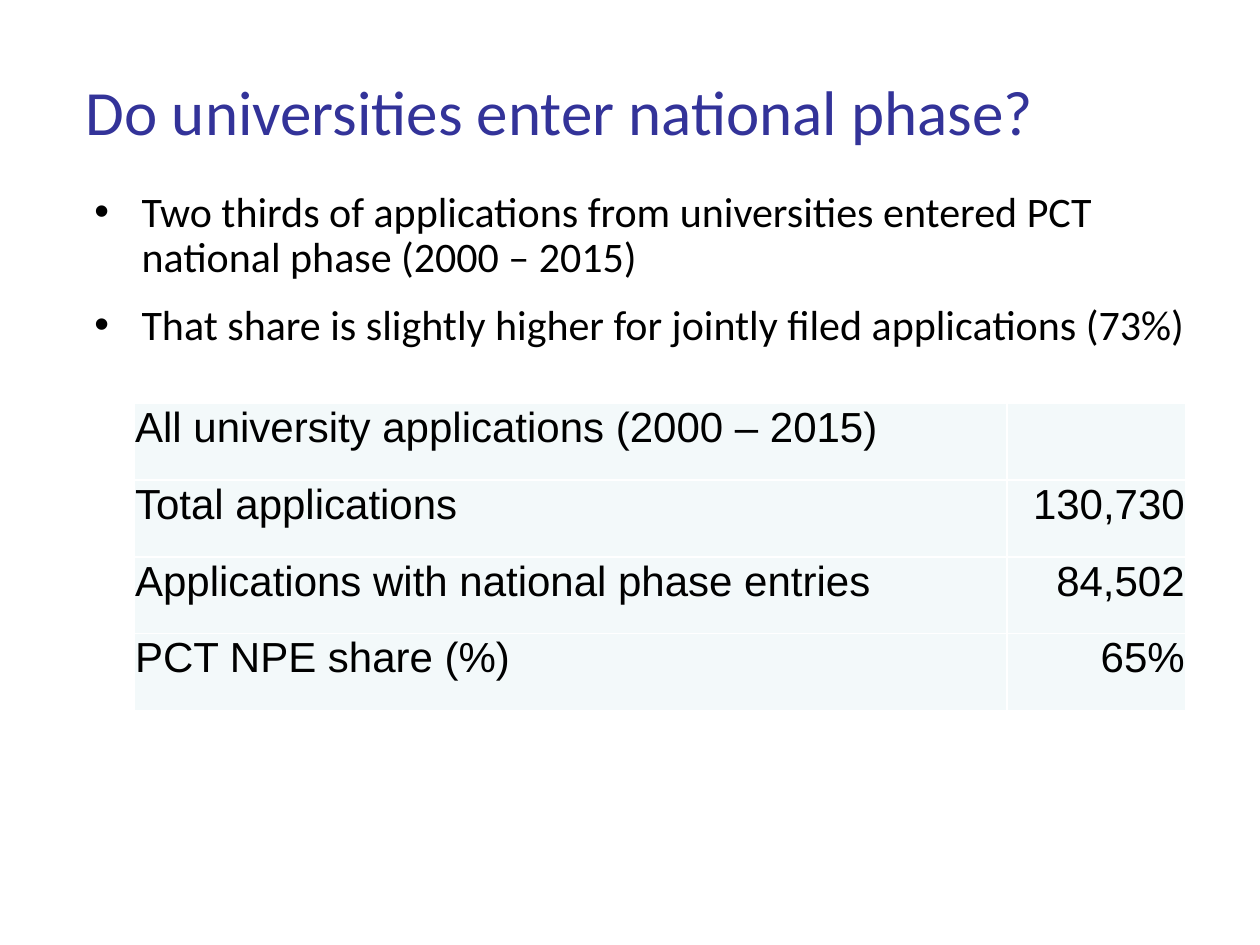
from lxml.etree import SubElement
from pptx import Presentation
from pptx.dml.color import RGBColor
from pptx.enum.text import MSO_ANCHOR, MSO_AUTO_SIZE, PP_ALIGN
from pptx.oxml import parse_xml
from pptx.oxml.ns import nsdecls, qn
from pptx.util import Pt

COLORS = {"title": "333399", "text": "000000", "cell": "F3F9FA", "border": "FFFFFF"}

POINTS = [
    "Two thirds of applications from universities entered PCT national phase (2000 – 2015)",
    "That share is slightly higher for jointly filed applications (73%)",
]
ROWS = [
    ("All university applications (2000 – 2015)", ""),
    ("Total applications", "130,730"),
    ("Applications with national phase entries", "84,502"),
    ("PCT NPE share (%)", "65%"),
]


def write(para, text, size=24, font="Calibri", color="text", align=PP_ALIGN.LEFT):
    para.text = text
    para.alignment = align
    para.font.size = Pt(size)
    para.font.name = font
    para.font.color.rgb = RGBColor.from_string(COLORS[color])


def place(shape, box):
    shape.left, shape.top, shape.width, shape.height = map(Pt, box)


def add_title(slide, box, text):
    title = slide.shapes.title
    place(title, box)
    frame = title.text_frame
    frame.word_wrap = True
    frame.auto_size = MSO_AUTO_SIZE.SHAPE_TO_FIT_TEXT
    frame.vertical_anchor = MSO_ANCHOR.MIDDLE
    write(frame.paragraphs[0], text, size=36, color="title")


def add_bullet(para, indent):
    """Give the paragraph a round bullet with a hanging indent."""
    props = para._p.get_or_add_pPr()
    props.set("marL", str(Pt(indent)))
    props.set("indent", str(-Pt(indent)))
    SubElement(props, qn("a:buFont")).set("typeface", "Arial")
    SubElement(props, qn("a:buChar")).set("char", "•")


def add_points(slide, box, points):
    frame = slide.shapes.add_textbox(*map(Pt, box)).text_frame
    frame.word_wrap = True
    for i, text in enumerate(points):
        para = frame.add_paragraph() if i else frame.paragraphs[0]
        add_bullet(para, 27)
        write(para, text)
        para.line_spacing = 0.9
        para.space_before = Pt(5 if i else 0)
        para.space_after = Pt(7.5)


def add_border(cell):
    props = cell._tc.get_or_add_tcPr()
    for i, side in enumerate("LRTB"):
        line = parse_xml(
            f'<a:ln{side} {nsdecls("a")} w="{Pt(1)}"><a:solidFill>'
            f'<a:srgbClr val="{COLORS["border"]}"/></a:solidFill></a:ln{side}>'
        )
        props.insert(i, line)


def fill_cell(cell, text, align):
    cell.margin_left = cell.margin_right = cell.margin_top = Pt(0.7)
    cell.margin_bottom = 0
    cell.fill.solid()
    cell.fill.fore_color.rgb = RGBColor.from_string(COLORS["cell"])
    add_border(cell)
    write(cell.text_frame.paragraphs[0], text, font="Arial", align=align)


def add_grid(slide, box, rows, share):
    """Add the table; share is the first column's part of the width."""
    table = slide.shapes.add_table(len(rows), 2, *map(Pt, box)).table
    table.first_row = table.horz_banding = False
    width = box[2]
    table.columns[0].width = Pt(width * share)
    table.columns[1].width = Pt(width * (1 - share))
    for r, row in enumerate(rows):
        for c, text in enumerate(row):
            align = PP_ALIGN.RIGHT if c else PP_ALIGN.LEFT
            fill_cell(table.cell(r, c), text, align)


def main():
    deck = Presentation()
    deck.slide_width, deck.slide_height = Pt(720), Pt(540)
    slide = deck.slides.add_slide(deck.slide_layouts[5])
    add_title(slide, (41.8, 37.4, 635.8, 51.1), "Do universities enter national phase?")
    add_points(slide, (46.8, 105.8, 665.3, 351.4), POINTS)
    add_grid(slide, (76.5, 230.4, 601.2, 175.7), ROWS, 0.83)
    deck.save("out.pptx")


if __name__ == "__main__":
    main()
